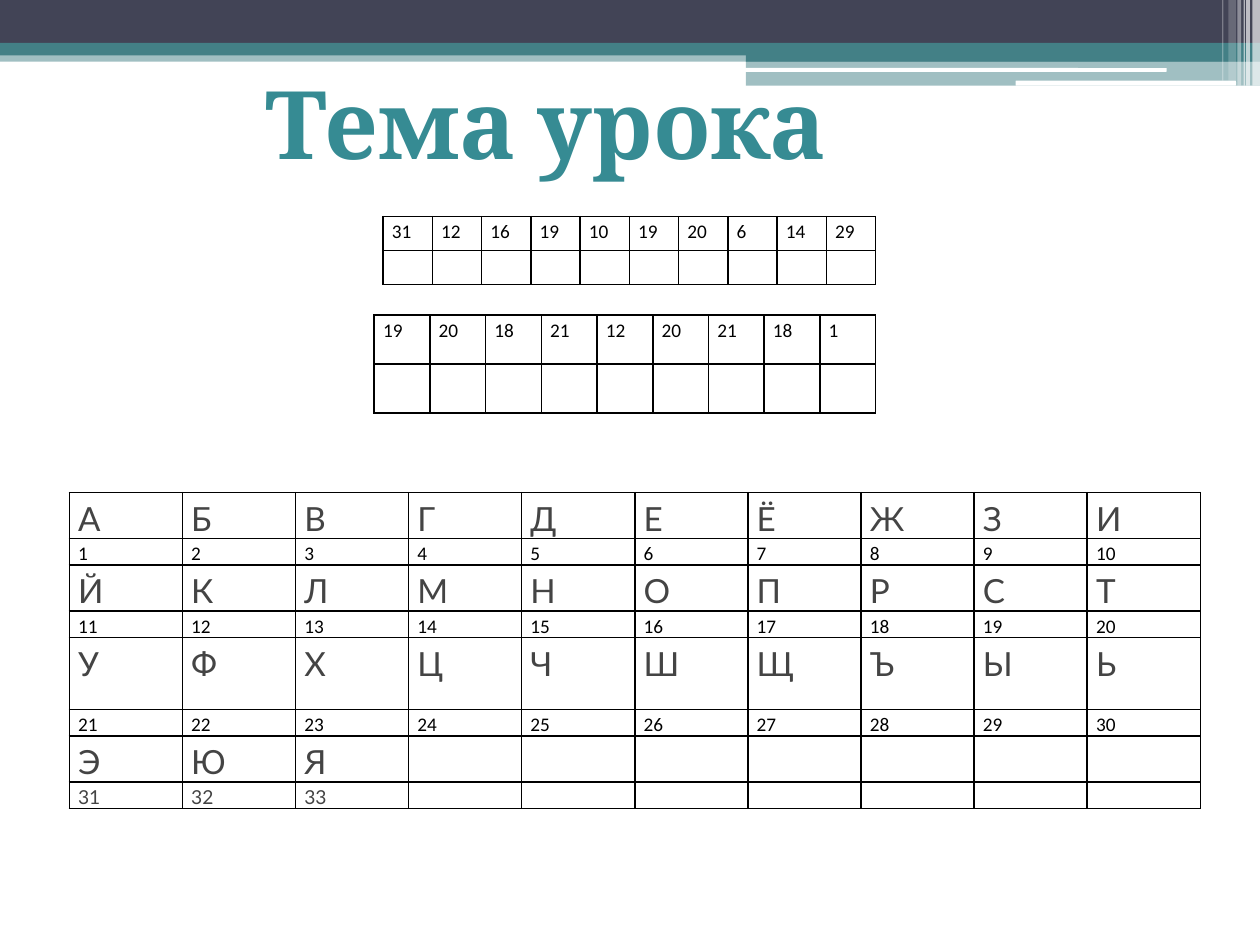
import pptx
import pptx.dml.color
import pptx.enum.shapes
import pptx.enum.text
import pptx.oxml
import pptx.oxml.ns
import pptx.util
from lxml import etree

Inches = pptx.util.Inches
Pt = pptx.util.Pt
HUES = {"navy": "424456", "teal": "438086", "white": "FFFFFF",
        "title": "368B93", "black": "000000", "gray": "444444"}
NUM = {"size": Pt(11), "name": "Calibri", "hue": "black"}
CHAR = {"size": Pt(19), "name": "Lato", "hue": "gray"}
LAST = {"size": Pt(11), "name": "Lato", "hue": "gray"}
HEAD = {"size": Pt(54), "name": "Cambria", "bold": True, "hue": "title"}


class Deck:
    """Style and current slide, with a method for each kind of element."""

    def __init__(self, slide, hues):
        self.slide = slide
        self.hues = hues

    def rgb(self, hue):
        return pptx.dml.color.RGBColor.from_string(self.hues[hue])

    def font(self, font, form):
        for key, val in form.items():
            if key == "hue":
                font.color.rgb = self.rgb(val)
            else:
                setattr(font, key, val)

    def bar(self, x, y, w, h, hue, alpha=100, kind="RECTANGLE"):
        form = getattr(pptx.enum.shapes.MSO_SHAPE, kind)
        bar = self.slide.shapes.add_shape(form, *map(Inches, (x, y, w, h)))
        bar.shadow.inherit = False
        bar.fill.solid()
        bar.fill.fore_color.rgb = self.rgb(hue)
        bar.line.fill.background()
        if alpha < 100:
            tint = bar.fill._xPr.find(".//" + pptx.oxml.ns.qn("a:srgbClr"))
            etree.SubElement(tint, pptx.oxml.ns.qn("a:alpha"), val=str(alpha * 1000))

    def title(self, x, y, w, h, text, form):
        frame = self.slide.shapes.add_textbox(*map(Inches, (x, y, w, h))).text_frame
        frame.word_wrap = True
        para = frame.paragraphs[0]
        para.alignment = pptx.enum.text.PP_ALIGN.CENTER
        run = para.add_run()
        run.text = text
        self.font(run.font, form)

    def edge(self, cell):
        props = cell._tc.get_or_add_tcPr()
        for side in "LRTB":
            props.append(pptx.oxml.parse_xml(
                f'<a:ln{side} {pptx.oxml.ns.nsdecls("a")} w="12700"><a:solidFill>'
                f'<a:srgbClr val="{self.hues["black"]}"/></a:solidFill></a:ln{side}>'))
        cell.fill.background()

    def cell(self, cell, text, form):
        self.edge(cell)
        pads = {"margin_left": 0.07, "margin_right": 0.07, "margin_top": 0, "margin_bottom": 0}
        for key, val in pads.items():
            setattr(cell, key, Inches(val))
        para = cell.text_frame.paragraphs[0]
        para.line_spacing = 1.15
        if text:
            run = para.add_run()
            run.text = text
            self.font(run.font, form)
        else:
            etree.SubElement(para._p, pptx.oxml.ns.qn("a:endParaRPr"),
                             sz=str(int(form["size"].pt * 100)))

    def table(self, x, y, w, highs, rows, forms):
        count = len(rows[0])
        table = self.slide.shapes.add_table(
            len(rows), count, *map(Inches, (x, y, w, sum(highs)))).table
        table.first_row = table.horz_banding = False
        for col in table.columns:
            col.width = Inches(w / count)
        for row, high, texts, form in zip(table.rows, highs, rows, forms):
            row.height = Inches(high)
            for i, cell in enumerate(row.cells):
                self.cell(cell, texts[i] if i < len(texts) else "", form)


def main():
    show = pptx.Presentation()
    show.slide_width, show.slide_height = Inches(10), Inches(7.5)
    deck = Deck(show.slides.add_slide(show.slide_layouts[6]), HUES)

    deck.bar(0, 0.4, 10, 0.09, "teal", 50)
    deck.bar(0, 0, 10, 0.34, "navy")
    deck.bar(0, 0.34, 10, 0.1, "teal")
    deck.bar(5.92, 0.39, 4.08, 0.1, "teal")
    deck.bar(5.92, 0.48, 4.08, 0.2, "teal", 50)
    for x, y, w, h in ((5.91, 0.54, 3.35, 0.03), (8.06, 0.64, 1.75, 0.04)):
        deck.bar(x, y, w, h, "white", kind="ROUNDED_RECTANGLE")
    for x, w, h, alpha in ((9.94, 0.06, 0.68, 65), (9.89, 0.03, 0.68, 65),
                           (9.87, 0.01, 0.68, 60), (9.82, 0.03, 0.68, 40),
                           (9.75, 0.06, 0.64, 20), (9.7, 0.01, 0.64, 30)):
        deck.bar(x, 0, w, h, "white", alpha)

    deck.title(1.75, 0.47, 5.17, 1.01, "Тема урока", HEAD)

    lower = "19 20 18 21 12 20 21 18 1".split()
    upper = "31 12 16 19 10 19 20 6 14 29".split()
    deck.table(2.97, 2.5, 3.98, [0.39] * 2, [lower, []], [NUM] * 2)
    deck.table(3.04, 1.72, 3.91, [0.27] * 2, [upper, []], [NUM] * 2)

    chars = "АБВГДЕЁЖЗИЙКЛМНОПРСТУФХЦЧШЩЪЫЬЭЮЯ"
    rows = []
    for i in range(0, len(chars), 10):
        part = chars[i:i + 10]
        rows += [part, [str(i + n + 1) for n in range(len(part))]]
    highs = [0.36, 0.21, 0.36, 0.21, 0.57, 0.21, 0.36, 0.21]
    deck.table(0.55, 3.91, 8.98, highs, rows, [CHAR, NUM] * 3 + [CHAR, LAST])

    show.save("out.pptx")


if __name__ == "__main__":
    main()
